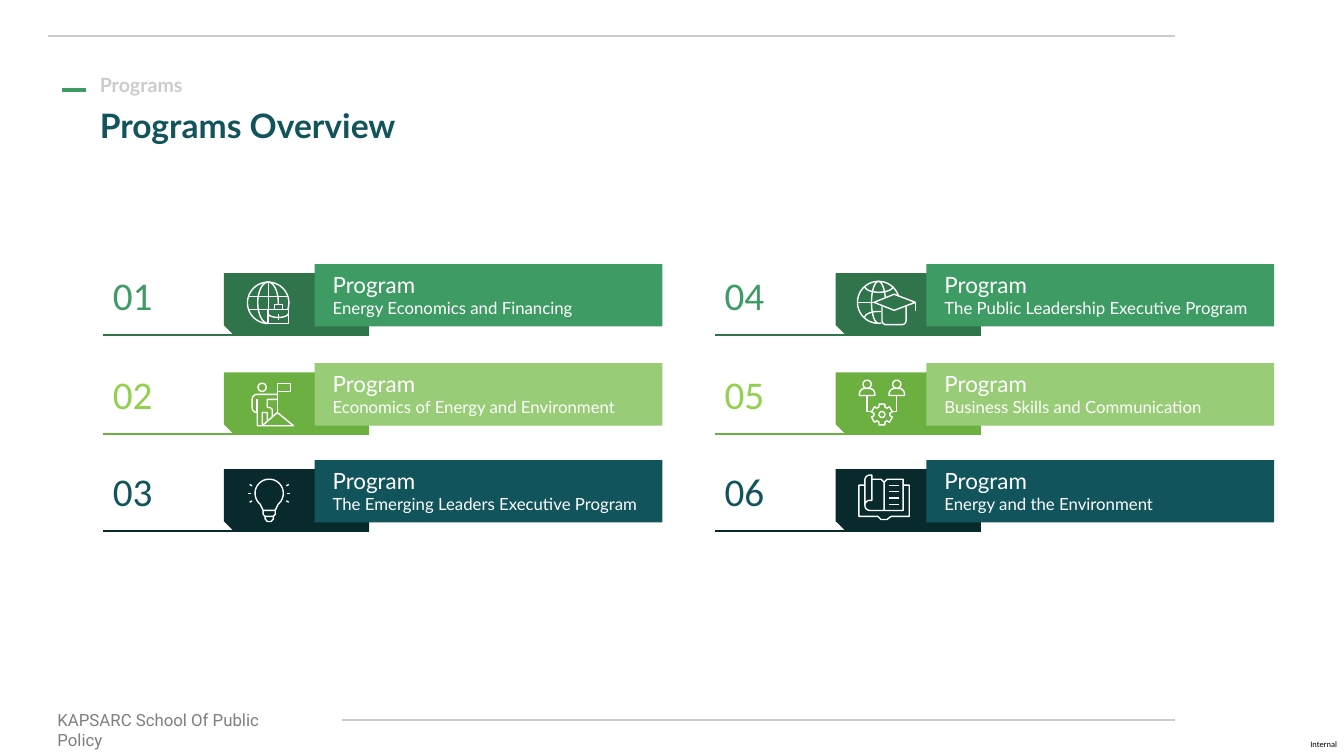
from math import cos, radians, sin

from pptx import Presentation
from pptx.dml.color import RGBColor
from pptx.enum import shapes
from pptx.oxml import ns
from pptx.util import Pt
from lxml import etree

WHITE = RGBColor(0xFF, 0xFF, 0xFF)
BLACK = RGBColor(0, 0, 0)
RULE_GRAY = RGBColor(0xCC, 0xCC, 0xCC)
FOOTER_GRAY = RGBColor(0x7F, 0x7F, 0x7F)
GREEN = RGBColor(0x3E, 0x9B, 0x64)
DARK_GREEN = RGBColor(0x2F, 0x74, 0x4B)
LIME = RGBColor(0x98, 0xCC, 0x76)
DARK_LIME = RGBColor(0x6D, 0xB0, 0x42)
BRIGHT_LIME = RGBColor(0x92, 0xD0, 0x50)
TEAL = RGBColor(0x11, 0x54, 0x5B)
DARK_TEAL = RGBColor(0x09, 0x2A, 0x2D)

COLUMN_LEFTS = (73.5, 510.5)
ROW_TOPS = (188.6, 259.4, 328.6)
ROW_COLORS = ((GREEN, DARK_GREEN, GREEN), (LIME, DARK_LIME, BRIGHT_LIME), (TEAL, DARK_TEAL, TEAL))


def add_line(parent, x1, y1, x2, y2, color, width):
    line = parent.shapes.add_connector(
        shapes.MSO_CONNECTOR.STRAIGHT, Pt(x1), Pt(y1), Pt(x2), Pt(y2))
    line.line.color.rgb = color
    line.line.width = Pt(width)
    etree.SubElement(line._element.spPr, ns.qn("a:effectLst"))


def add_text(slide, left, top, width, height, lines, font_name, color, bold=False, inset=True):
    box = slide.shapes.add_textbox(Pt(left), Pt(top), Pt(width), Pt(height))
    frame = box.text_frame
    frame.word_wrap = True
    if not inset:
        frame.margin_left = frame.margin_right = frame.margin_top = frame.margin_bottom = 0
    frame.text = "\n".join(words for words, size in lines)
    for paragraph, (words, size) in zip(frame.paragraphs, lines):
        font = paragraph.runs[0].font
        font.name, font.size, font.bold = font_name, Pt(size), bold
        font.color.rgb = color
    return frame


def add_block(slide, kind, left, top, width, height, color):
    block = slide.shapes.add_shape(kind, Pt(left), Pt(top), Pt(width), Pt(height))
    block.shadow.inherit = False
    block.fill.solid()
    block.fill.fore_color.rgb = color
    block.line.fill.background()
    return block


def arc(x, y, radius_x, radius_y, start, end):
    steps = max(6, round(abs(end - start) / 8))
    angles = [radians(start + (end - start) * step / steps) for step in range(steps + 1)]
    return [(x + radius_x * cos(angle), y + radius_y * sin(angle)) for angle in angles]


def circle(x, y, radius):
    return arc(x, y, radius, radius, 0, 360)


def globe_case_icon():
    return [
        arc(31.7, 21.2, 14.8, 14.8, 90, 378),
        [(17.3, 25.9), (31.7, 25.9)], [(17.3, 16.6), (45.4, 16.6)], [(31.7, 6.5), (31.7, 25.9)],
        arc(31.7, 21.2, 7.2, 14.8, 270, 364), arc(31.7, 21.2, 7.5, 14.8, 90, 270),
        [(46.1, 36), (31.7, 36), (31.7, 25.9), (46.1, 25.9), (46.1, 36)],
        arc(38.9, 28.8, 7.2, 2.9, 0, 180), [(38.9, 29.5), (38.9, 33.8)],
        [(36, 25.9), (36, 22.3), (41.8, 22.3), (41.8, 25.9)],
    ]


def climber_icon():
    return [
        [(38.2, 15.8)] + arc(23.8, 19.4, 3.6, 3.6, 270, 180) + arc(23.8, 25.2, 3.6, 3.6, 180, 90)
        + [(23.8, 38.2), (27.4, 38.2), (27.4, 28.8), (31, 28.8), (31, 34.6)],
        [(34.6, 31.7), (34.6, 26.6), (33.1, 25.2), (31, 25.2), (31, 19.4), (38.2, 19.4)],
        [(23.8, 19.4), (23.8, 28.8)],
        [(49.7, 38.2), (38.2, 28.8), (27.4, 38.2), (49.7, 38.2)],
        [(38.2, 7.9), (38.2, 28.8)],
        [(38.2, 7.9), (47.5, 7.9), (47.5, 13.7), (38.2, 13.7)],
        circle(27.4, 10.8, 2.9),
    ]


def bulb_icon():
    x, y = 32.4, 17.3
    glass = arc(x, y, 10.1, 10.1, 130, 410) + [(36.7, 29.5), (28.1, 29.5)]
    strokes = [
        glass + glass[:1],
        [(28.1, 29.5), (28.1, 32.4), (29.5, 33.8), (35.3, 33.8), (36.7, 32.4), (36.7, 29.5)],
        [(29.5, 33.8), (29.5, 35.6), (31, 37.4), (33.8, 37.4), (35.3, 35.6), (35.3, 33.8)],
    ]
    for side in (-1, 1):
        strokes.append([(x + side * 13, y), (x + side * 15.1, y)])
        for rise in (-1, 1):
            strokes.append([(x + side * 12.2, y + rise * 5.4), (x + side * 14, y + rise * 6.3)])
    return strokes


def graduate_icon():
    return [
        arc(30.6, 20.9, 15, 15, 344, 82), arc(30.6, 20.9, 5, 15, 346, 90),
        arc(30.9, 9.4, 10.1, 4.3, 0, 180), arc(30.9, 31.7, 10.1, 4.3, 278, 180),
        [(15.1, 20.9), (28.1, 20.9)],
        [(41.8, 15.1), (56.9, 20.9), (41.8, 26.6), (27.4, 20.9), (41.8, 15.1)],
        [(56.9, 20.9), (56.9, 27.4)],
        [(50.4, 23.8)] + arc(47.3, 33.7, 3.1, 3.1, 0, 90)
        + arc(36.2, 33.7, 3.1, 3.1, 90, 180) + [(33.1, 23.8)],
    ]


def team_icon():
    middle, gear_y = 33.1, 30.2
    strokes = [circle(middle, gear_y, 2.1)]
    for side in (-1, 1):
        x = middle + side * 10.6
        strokes.append([(middle + side * 7.2, 28.1), (x, 28.1), (x, 16.6)])
        strokes.append(circle(x, 8.6, 2.9))
        strokes.append([(x - 5.5, 16.6)] + arc(x - 1.4, 15.6, 4.1, 4.1, 180, 270)
                       + arc(x + 1.4, 15.6, 4.1, 4.1, 270, 360) + [(x + 5.5, 16.6), (x - 5.5, 16.6)])
    gear = []
    for tooth in range(6):
        turn = radians(60 * tooth)
        for x, y in ((-2.1, -5.4), (-2.1, -7.4), (2.1, -7.4), (2.1, -5.4)):
            gear.append((middle + x * cos(turn) - y * sin(turn), gear_y + x * sin(turn) + y * cos(turn)))
    return strokes + [gear + gear[:1]]


def book_icon():
    text_rows = [11.5 + 4.6 * row for row in range(4)]
    return [
        [(20.9, 11.5), (16.6, 11.5), (16.6, 33.8), (30.2, 33.8), (32.4, 36), (36.7, 36),
         (39.6, 33.8), (52.6, 33.8), (52.6, 11.5), (48.2, 11.5)],
        [(20.9, 25.9)] + arc(24.5, 7.9, 3.6, 3.6, 180, 270) + [(25.9, 4.3), (25.9, 22.3)]
        + arc(24.5, 25.9, 3.6, 3.6, 270, 90)[:1] + arc(24.5, 25.9, 3.6, 3.6, 270, 180),
        arc(24.5, 25.9, 3.6, 3.6, 180, 90)
        + [(48.2, 29.5), (48.2, 7.2), (36.7, 7.2), (34.6, 9.4), (34.6, 29.5)],
        [(25.9, 7.2), (32.4, 7.2), (34.6, 9.4)],
    ] + [[(38.2, y), (45.4, y)] for y in text_rows]


PROGRAMS = (
    ("Energy Economics and Financing", globe_case_icon),
    ("Economics of Energy and Environment", climber_icon),
    ("The Emerging Leaders Executive Program", bulb_icon),
    ("The Public Leadership Executive Program", graduate_icon),
    ("Business Skills and Communication", team_icon),
    ("Energy and the Environment", book_icon),
)


def draw_icon(slide, left, top, strokes):
    group = slide.shapes.add_group_shape()
    for stroke in strokes:
        points = [(left + x, top + y) for x, y in stroke]
        if len(points) == 2:
            add_line(group, *points[0], *points[1], WHITE, 1)
            continue
        points = [(Pt(x), Pt(y)) for x, y in points]
        builder = group.shapes.build_freeform(*points[0])
        builder.add_line_segments(points[1:], close=stroke[0] == stroke[-1])
        outline = builder.convert_to_shape()
        outline.shadow.inherit = False
        outline.fill.background()
        outline.line.color.rgb = WHITE
        outline.line.width = Pt(1)


def draw_program(slide, left, top, number, name, icon, colors):
    bar_color, tab_color, number_color = colors
    tab = add_block(slide, shapes.MSO_SHAPE.SNIP_1_RECTANGLE,
                    left + 86.4, top + 6.5, 103.7, 44.6, tab_color)
    tab.rotation = 180
    add_block(slide, shapes.MSO_SHAPE.RECTANGLE, left + 151.2, top, 248.4, 44.6, bar_color)
    add_text(slide, left + 157, top + 1.6, 239, 41, [("Program", 16), (name, 12)], "Lato", WHITE)
    add_text(slide, left, top + 1.6, 57.6, 41, [(f"{number:02d}", 28)], "Calibri", number_color)
    add_line(slide, left, top + 50.7, left + 190.1, top + 50.7, tab_color, 1.5)
    draw_icon(slide, left + 86.4, top + 6.5, icon())


def draw_header(slide, left, top):
    add_line(slide, left, top, left + 805, top, RULE_GRAY, 1)
    add_line(slide, left + 10, top + 38.8, left + 27.4, top + 38.8, GREEN, 3)
    add_text(slide, left + 30.2, top + 23, 237.6, 24.5, [("Programs", 14)], "Lato", RULE_GRAY, True)
    title = add_text(slide, left + 30.2, top + 46.1, 391.7, 34.6,
                     [("Programs Overview", 24)], "Lato", TEAL, True)
    title.paragraphs[0].line_spacing = Pt(28.8)


def draw_footer(slide, left, top):
    add_line(slide, left + 210.2, top + 10.8, left + 805, top + 10.8, RULE_GRAY, 1)
    add_text(slide, left, top, 187.2, 21.6,
             [("KAPSARC School Of Public Policy", 12)], "Roboto", FOOTER_GRAY)
    add_text(slide, left + 902, top + 24.5, 20.5, 7.2, [("Internal", 6)], "Calibri", BLACK, inset=False)


def main():
    presentation = Presentation()
    presentation.slide_width, presentation.slide_height = Pt(960), Pt(540)
    slide = presentation.slides.add_slide(presentation.slide_layouts[6])
    draw_footer(slide, 34, 503.5)
    draw_header(slide, 34, 25.6)
    for index, (name, icon) in enumerate(PROGRAMS):
        column, row = divmod(index, len(ROW_TOPS))
        draw_program(slide, COLUMN_LEFTS[column], ROW_TOPS[row], index + 1, name, icon, ROW_COLORS[row])
    presentation.save("out.pptx")


if __name__ == "__main__":
    main()
